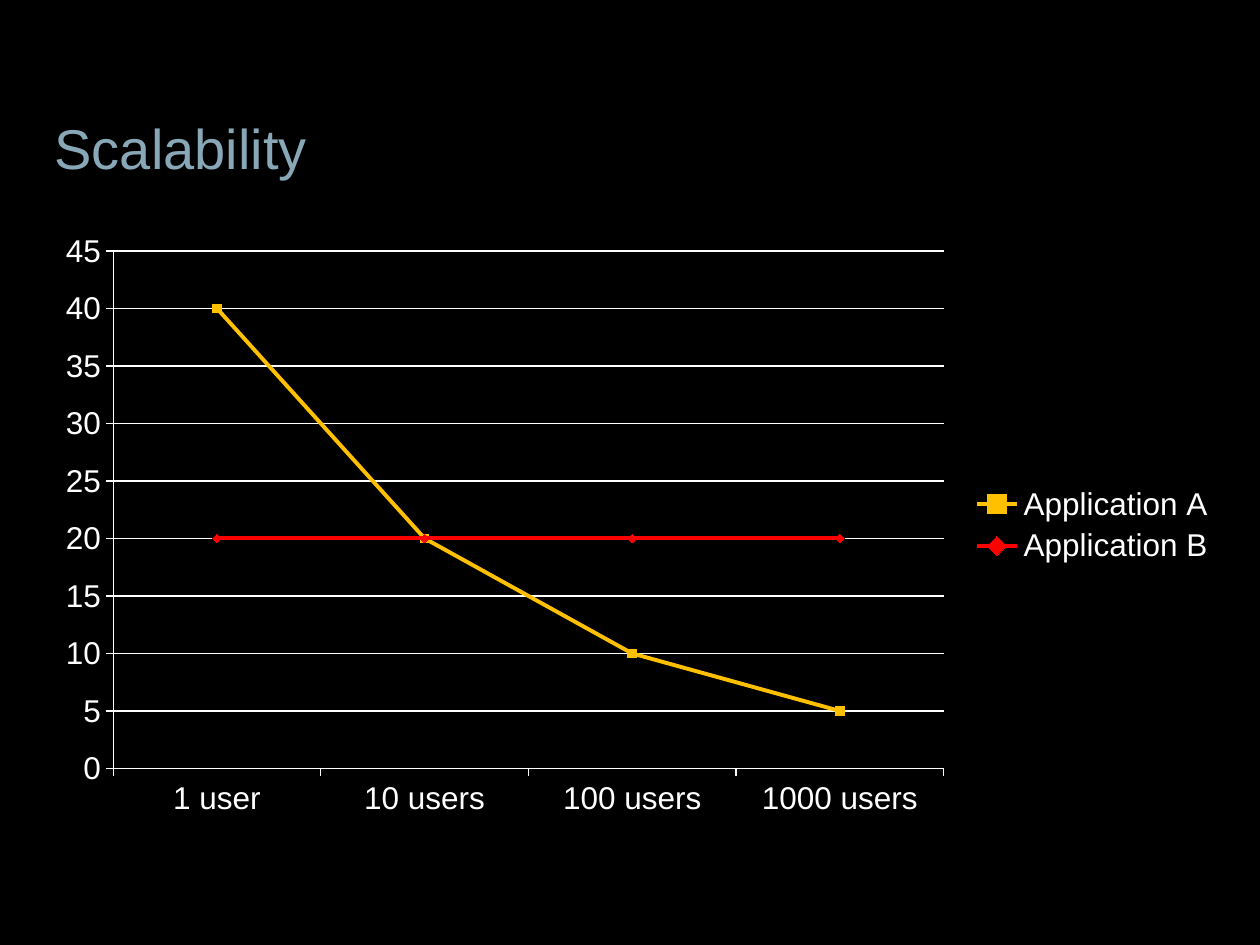
from dataclasses import dataclass
from lxml.etree import SubElement
from pptx import Presentation
from pptx.chart.data import CategoryChartData
from pptx.dml.color import RGBColor
from pptx.enum.chart import XL_CHART_TYPE, XL_LEGEND_POSITION, XL_MARKER_STYLE, XL_TICK_MARK
from pptx.enum.text import MSO_ANCHOR, PP_ALIGN
from pptx.oxml.ns import qn
from pptx.util import Pt


@dataclass
class Theme:
    font: str = "Arial"
    back: RGBColor = RGBColor(0, 0, 0)
    head: RGBColor = RGBColor(0x89, 0xA8, 0xB7)
    text: RGBColor = RGBColor(255, 255, 255)
    gold: RGBColor = RGBColor(0xFF, 0xC0, 0)
    red: RGBColor = RGBColor(255, 0, 0)
    big: int = 32
    small: int = 18


def style(font, size, color):
    font.name = theme.font
    font.size = Pt(size)
    font.bold = False
    font.color.rgb = color


theme = Theme()
deck = Presentation()
deck.slide_width, deck.slide_height = Pt(720), Pt(540)
slide = deck.slides.add_slide(deck.slide_layouts[5])
slide.background.fill.solid()
slide.background.fill.fore_color.rgb = theme.back

title = slide.shapes.title
title.left, title.top, title.width, title.height = Pt(24), Pt(66), Pt(612), Pt(36)
frame = title.text_frame
frame.text = "Scalability"
frame.vertical_anchor = MSO_ANCHOR.MIDDLE
frame.paragraphs[0].alignment = PP_ALIGN.LEFT
style(frame.paragraphs[0].runs[0].font, theme.big, theme.head)

data = CategoryChartData()
data.categories = ["1 user", "10 users", "100 users", "1000 users"]
data.add_series("Application A", [40, 20, 10, 5])
data.add_series("Application B", [20, 20, 20, 20])
chart = slide.shapes.add_chart(
    XL_CHART_TYPE.LINE_MARKERS, Pt(24), Pt(126), Pt(678), Pt(348), data
).chart
style(chart.font, theme.small, theme.text)
chart.has_title = False
chart.has_legend = True
chart.legend.position = XL_LEGEND_POSITION.RIGHT
chart.legend.include_in_layout = False

value = chart.value_axis
value.minimum_scale, value.maximum_scale, value.major_unit = 0, 45, 5
value.has_major_gridlines = True
for axis in (chart.category_axis, value):
    axis.major_tick_mark = XL_TICK_MARK.OUTSIDE
    axis.minor_tick_mark = XL_TICK_MARK.NONE
for line in (chart.category_axis.format.line, value.format.line,
             value.major_gridlines.format.line):
    line.color.rgb = theme.text
    line.width = Pt(0.75)

plot = chart.plots[0]
plot.vary_by_categories = False
looks = [(theme.gold, XL_MARKER_STYLE.SQUARE), (theme.red, XL_MARKER_STYLE.DIAMOND)]
for series, (color, mark) in zip(plot.series, looks):
    series.smooth = False
    series.format.line.color.rgb = color
    series.format.line.width = Pt(2.25)
    series.marker.style = mark
    series.marker.size = 5
    series.marker.format.fill.solid()
    series.marker.format.fill.fore_color.rgb = color
    series.marker.format.line.fill.background()

area = chart.element.find(".//" + qn("c:plotArea"))
for old in area.findall(qn("c:layout")):
    area.remove(old)
layout = SubElement(area, qn("c:layout"))
area.insert(0, layout)
manual = SubElement(layout, qn("c:manualLayout"))
for tag, val in (("layoutTarget", "inner"), ("xMode", "edge"), ("yMode", "edge"),
                 ("x", "0.06"), ("y", "0.05"), ("w", "0.7"), ("h", "0.85")):
    SubElement(manual, qn("c:" + tag)).set("val", val)

deck.save("out.pptx")
